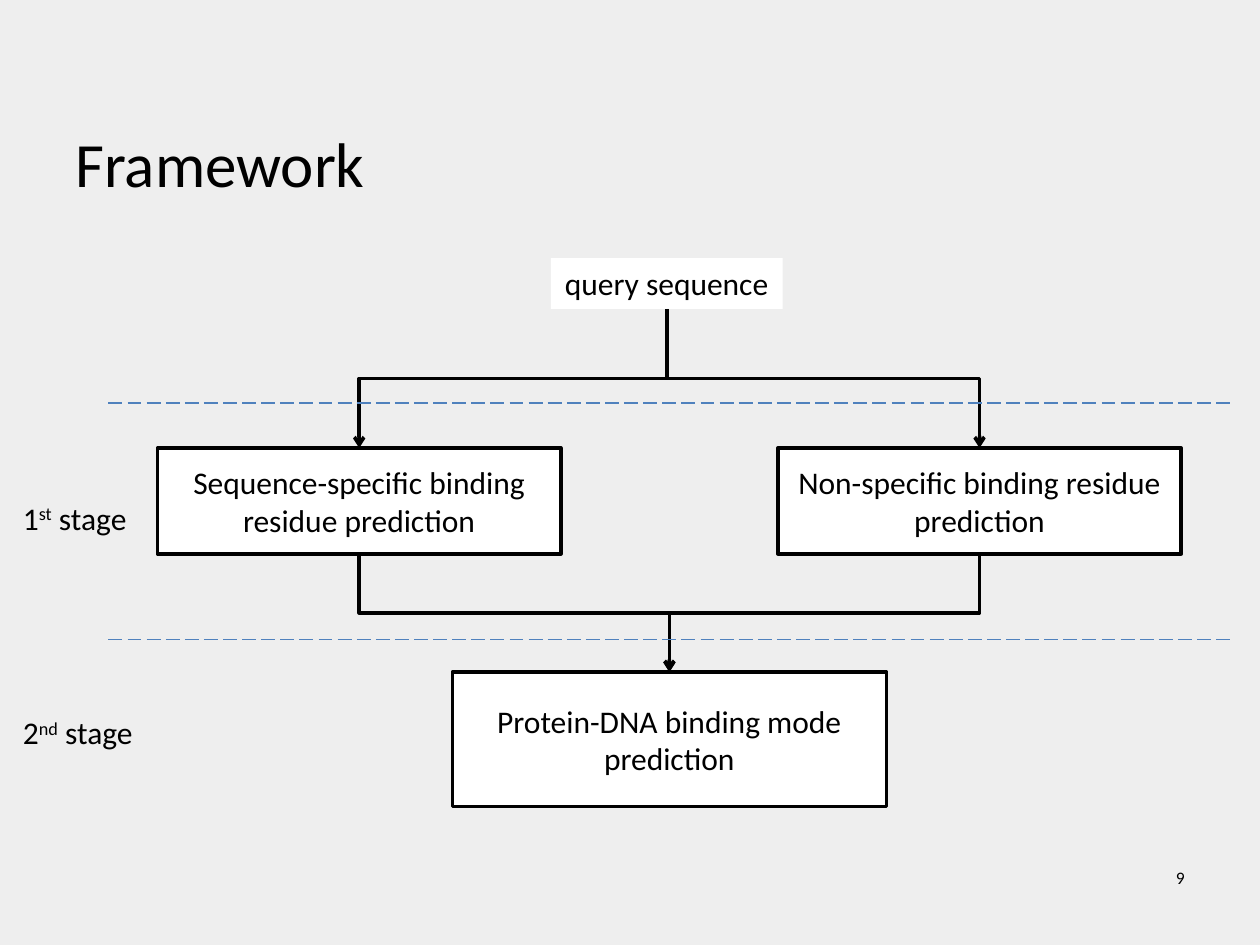
from lxml.etree import SubElement
from pptx import Presentation
from pptx.dml.color import RGBColor
from pptx.enum.dml import MSO_LINE
from pptx.enum.shapes import MSO_CONNECTOR, MSO_SHAPE
from pptx.enum.text import MSO_ANCHOR, PP_ALIGN
from pptx.oxml.ns import qn
from pptx.util import Pt

HUES = {"back": "EEEEEE", "ink": "000000", "box": "FFFFFF", "rule": "4F81BD"}
FONT = "Calibri"


def hue(name):
    return RGBColor.from_string(HUES[name])


def write(shape, parts, size=18, align=PP_ALIGN.LEFT, anchor=MSO_ANCHOR.TOP, wrap=True):
    frame = shape.text_frame
    frame.word_wrap = wrap
    frame.vertical_anchor = anchor
    para = frame.paragraphs[0]
    para.alignment = align
    for text, base in parts:
        run = para.add_run()
        run.text = text
        run.font.name = FONT
        run.font.size = Pt(size)
        run.font.color.rgb = hue("ink")
        if base:
            run.font._element.set("baseline", str(base * 1000))


def add_text(slide, box, parts, **style):
    shape = slide.shapes.add_textbox(*map(Pt, box))
    write(shape, parts, **style)


def add_box(slide, box, text, kind=MSO_SHAPE.FLOWCHART_PROCESS, edge=True,
            anchor=MSO_ANCHOR.MIDDLE, wrap=True):
    shape = slide.shapes.add_shape(kind, *map(Pt, box))
    shape.shadow.inherit = False
    shape.fill.solid()
    shape.fill.fore_color.rgb = hue("box")
    if edge:
        shape.line.color.rgb = hue("ink")
        shape.line.width = Pt(2)
    else:
        shape.line.fill.background()
    write(shape, [(text, 0)], align=PP_ALIGN.CENTER, anchor=anchor, wrap=wrap)
    return shape


def add_line(slide, kind, ends, color, width):
    line = slide.shapes.add_connector(kind, *ends)
    line.line.color.rgb = hue(color)
    line.line.width = Pt(width)
    SubElement(line.element.spPr, qn("a:effectLst"))
    return line


def add_elbow(slide, start, stop):
    x1, y1 = start.left + start.width // 2, start.top + start.height
    x2, y2 = stop.left + stop.width // 2, stop.top
    line = add_line(slide, MSO_CONNECTOR.ELBOW, (x1, y1, x2, y2), "ink", 2)
    line.begin_connect(start, 2)
    line.end_connect(stop, 0)
    wide, high = y2 - y1, abs(x2 - x1)
    line.left, line.top = (x1 + x2 - wide) // 2, (y1 + y2 - high) // 2
    line.width, line.height = wide, high
    right = x2 > x1
    frame = line.element.spPr.find(qn("a:xfrm"))
    frame.set("rot", str((270 if right else 90) * 60000))
    frame.set("flipH", "1" if right else "0")
    frame.set("flipV", "0")
    SubElement(line.line._get_or_add_ln(), qn("a:tailEnd"), type="arrow")


def add_flow(slide, box):
    left, top, width, height = box
    wide, high = 230.5, 60.5
    mid = left + width / 2
    row = top + 108.5
    query = add_box(slide, (mid - 67.75, top, 132.5, 29), "query sequence",
                    MSO_SHAPE.RECTANGLE, False, MSO_ANCHOR.TOP, False)
    first = add_box(slide, (left, row, wide, high),
                    "Sequence-specific binding residue prediction")
    other = add_box(slide, (left + width - wide, row, wide, high),
                    "Non-specific binding residue prediction")
    mode = add_box(slide, (mid - 124, top + height - 77, 248, 77),
                   "Protein-DNA binding mode prediction")
    for start, stop in ((query, first), (query, other), (first, mode), (other, mode)):
        add_elbow(slide, start, stop)


def add_stage(slide, box, count, mark, drop):
    left, top, width, height = box
    ends = [Pt(n) for n in (left + 56, top, left + width, top)]
    rule = add_line(slide, MSO_CONNECTOR.STRAIGHT, ends, "rule", 1)
    rule.line.dash_style = MSO_LINE.LONG_DASH
    add_text(slide, (left, top + drop, 80, 29),
             [(count, 0), (mark, 30), (" stage", 0)], wrap=False)


def main():
    deck = Presentation()
    deck.slide_width, deck.slide_height = Pt(720), Pt(540)
    slide = deck.slides.add_slide(deck.slide_layouts[6])
    slide.background.fill.solid()
    slide.background.fill.fore_color.rgb = hue("back")
    add_text(slide, (36, 28, 648, 90), [("Framework", 0)], size=36,
             anchor=MSO_ANCHOR.BOTTOM)
    add_text(slide, (516, 492, 168, 37), [("9", 0)], size=10, align=PP_ALIGN.RIGHT)
    add_flow(slide, (90, 147.5, 585, 313.5))
    add_stage(slide, (6, 230.5, 697.5, 135), "1", "st", 51)
    add_stage(slide, (6, 365.5, 697.5, 95), "2", "nd", 38.5)
    deck.save("out.pptx")


if __name__ == "__main__":
    main()
